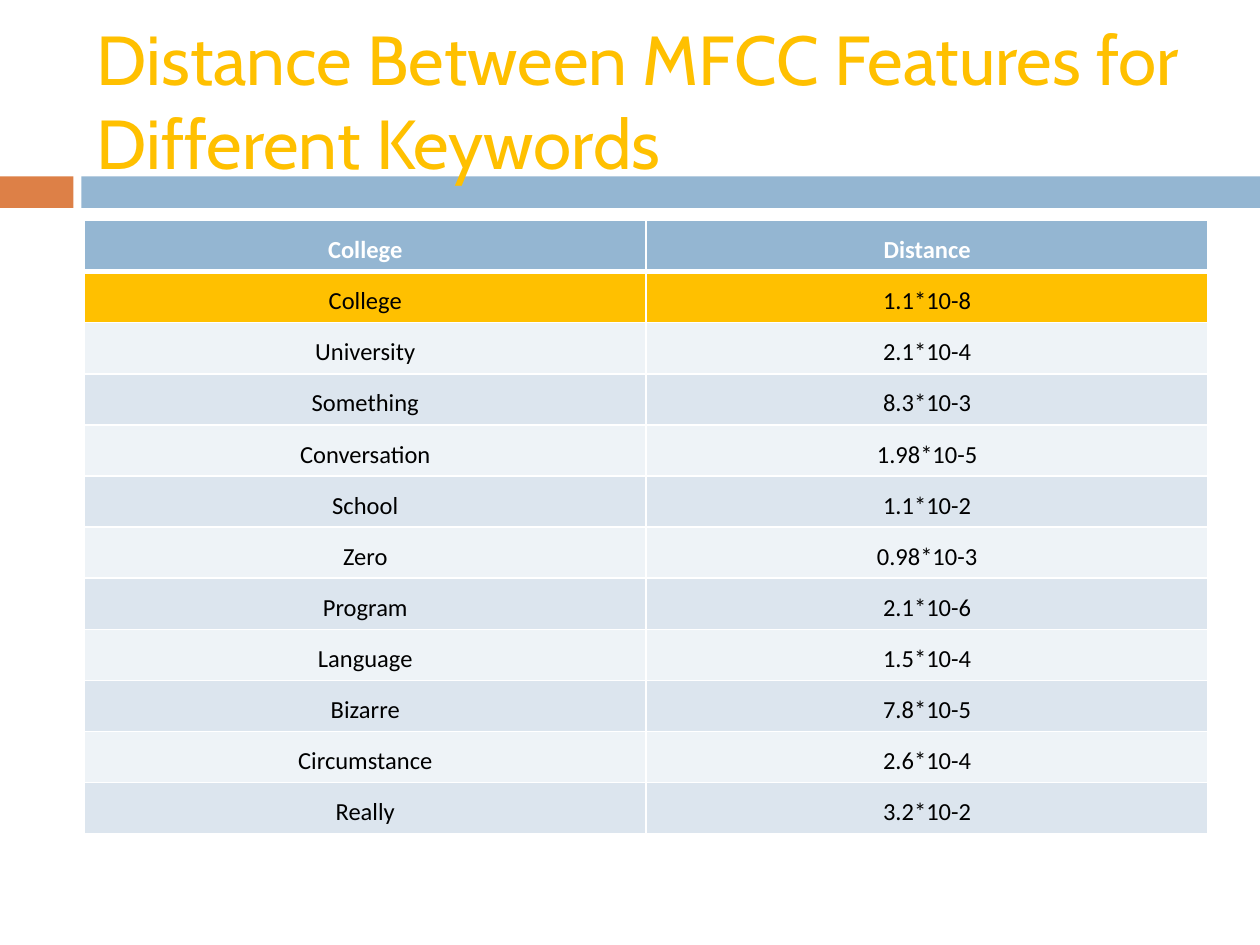
from dataclasses import dataclass

from lxml import etree
from pptx import Presentation
from pptx.dml.color import RGBColor
from pptx.enum import shapes, text
from pptx.oxml import ns
from pptx.util import Pt


@dataclass(frozen=True)
class Theme:
    gold: str = "FFC000"
    blue: str = "94B6D2"
    rust: str = "DD8047"
    pale: str = "EEF3F7"
    mist: str = "DCE5EE"
    white: str = "FFFFFF"
    black: str = "000000"
    head: str = "Cabin"
    body: str = "Calibri"
    big: float = 39.6
    small: float = 14


@dataclass(frozen=True)
class Bar:
    left: float
    width: float
    fill: str


@dataclass(frozen=True)
class Row:
    word: str
    value: str
    fill: str
    ink: str
    bold: bool = False
    top: float = 1
    base: float = 1


LOOK = Theme()
LEFT, WIDTH = 48.2, 642.2
BARS = [Bar(0, 42, LOOK.rust), Bar(46.5, 673.5, LOOK.blue)]
DATA = [
    ("University", "2.1*10-4"),
    ("Something", "8.3*10-3"),
    ("Conversation", "1.98*10-5"),
    ("School", "1.1*10-2"),
    ("Zero", "0.98*10-3"),
    ("Program", "2.1*10-6"),
    ("Language", "1.5*10-4"),
    ("Bizarre", "7.8*10-5"),
    ("Circumstance", "2.6*10-4"),
    ("Really", "3.2*10-2"),
]
ROWS = [
    Row("College", "Distance", LOOK.blue, LOOK.white, True, base=3),
    Row("College", "1.1*10-8", LOOK.gold, LOOK.black, top=3),
] + [
    Row(word, value, (LOOK.pale, LOOK.mist)[i % 2], LOOK.black)
    for i, (word, value) in enumerate(DATA)
]


def write(para, words: str, face: str, size: float, ink: str, bold: bool = False) -> None:
    run = para.add_run()
    run.text = words
    run.font.name = face
    run.font.size = Pt(size)
    run.font.bold = bold
    run.font.color.rgb = RGBColor.from_string(ink)


def draw_title(slide, words: str):
    title = slide.shapes.title
    title.left, title.top = Pt(LEFT), Pt(18)
    title.width, title.height = Pt(WIDTH), Pt(78)
    frame = title.text_frame
    frame.word_wrap = True
    frame.auto_size = text.MSO_AUTO_SIZE.NONE
    frame.vertical_anchor = text.MSO_ANCHOR.MIDDLE
    para = frame.paragraphs[0]
    para.alignment = text.PP_ALIGN.LEFT
    para.line_spacing = 1.0
    write(para, words, LOOK.head, LOOK.big, LOOK.gold)
    return title


def draw_bar(slide, bar: Bar, title) -> None:
    shape = slide.shapes.add_shape(
        shapes.MSO_SHAPE.RECTANGLE, Pt(bar.left), Pt(100.8), Pt(bar.width), Pt(18)
    )
    shape.shadow.inherit = False
    shape.fill.solid()
    shape.fill.fore_color.rgb = RGBColor.from_string(bar.fill)
    shape.line.fill.background()
    title.element.addprevious(shape.element)


def edge(cell, side: str, width: float) -> None:
    props = cell._tc.get_or_add_tcPr()
    line = etree.SubElement(props, ns.qn(f"a:ln{side}"), w=str(Pt(width)))
    fill = etree.SubElement(line, ns.qn("a:solidFill"))
    etree.SubElement(fill, ns.qn("a:srgbClr"), val=LOOK.white)


def draw_cell(cell, words: str, row: Row) -> None:
    for side, width in (("L", 1), ("R", 1), ("T", row.top), ("B", row.base)):
        edge(cell, side, width)
    cell.fill.solid()
    cell.fill.fore_color.rgb = RGBColor.from_string(row.fill)
    cell.margin_left = cell.margin_right = Pt(5.4)
    cell.margin_top = cell.margin_bottom = Pt(0)
    para = cell.text_frame.paragraphs[0]
    para.alignment = text.PP_ALIGN.CENTER
    para.line_spacing = 1.5
    write(para, words, LOOK.body, LOOK.small, row.ink, row.bold)


def draw_table(slide, rows: list[Row]) -> None:
    table = slide.shapes.add_table(
        len(rows), 2, Pt(LEFT), Pt(126), Pt(WIDTH), Pt(350.4)
    ).table
    for line, row in zip(table.rows, rows):
        line.height = Pt(29.2)
        for cell, words in zip(line.cells, (row.word, row.value)):
            draw_cell(cell, words, row)


def main() -> None:
    deck = Presentation()
    deck.slide_width, deck.slide_height = Pt(720), Pt(540)
    slide = deck.slides.add_slide(deck.slide_layouts[5])
    title = draw_title(slide, "Distance Between MFCC Features for Different Keywords")
    for bar in BARS:
        draw_bar(slide, bar, title)
    draw_table(slide, ROWS)
    deck.save("out.pptx")


if __name__ == "__main__":
    main()
